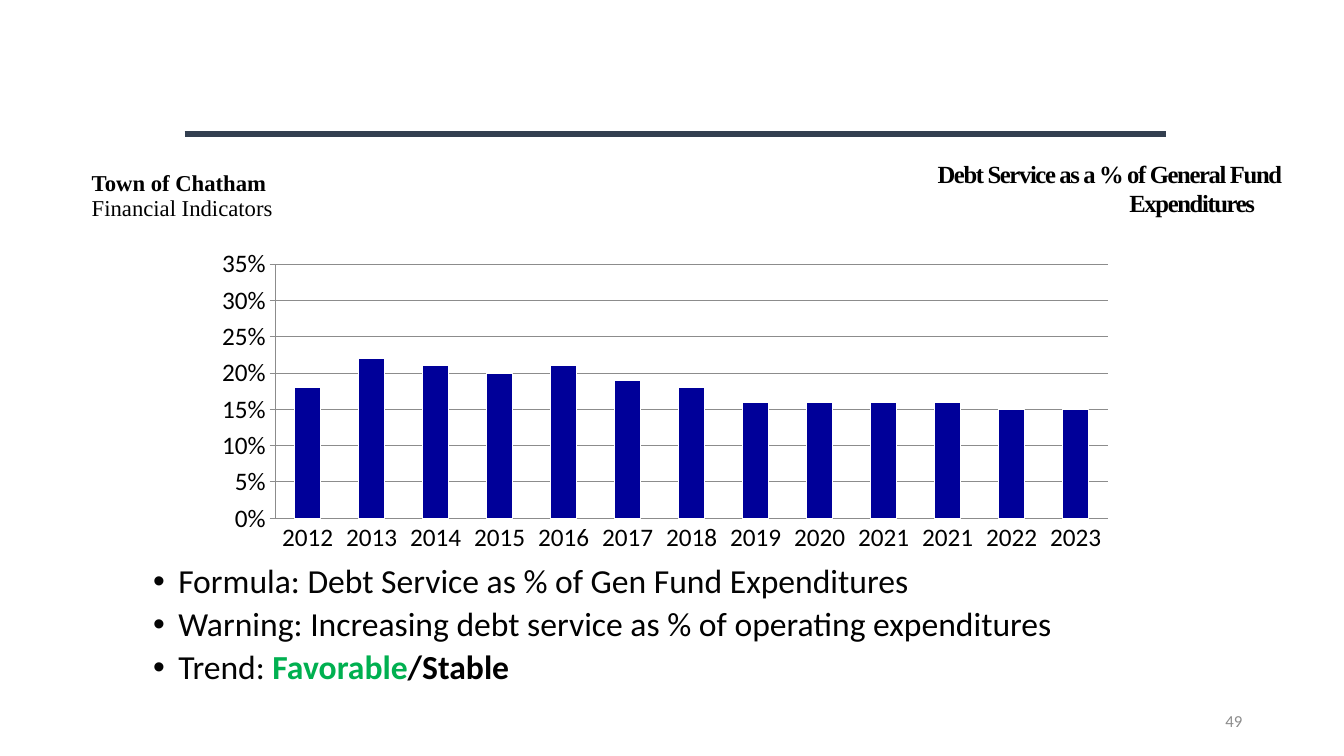
import pptx
import pptx.util
import pptx.chart.data
import pptx.dml.color
import pptx.enum.chart
import pptx.enum.shapes
import pptx.enum.text
import pptx.oxml
import pptx.oxml.ns

Inches = pptx.util.Inches
Pt = pptx.util.Pt
Align = pptx.enum.text.PP_ALIGN
Anchor = pptx.enum.text.MSO_ANCHOR
Tick = pptx.enum.chart.XL_TICK_MARK

THEME = {
    "black": "000000", "ink": "040404", "green": "00B050", "gray": "8C8C8C",
    "navy": "333F50", "bar": "000099", "white": "FFFFFF",
    "serif": "Times New Roman", "sans": "Calibri",
    "title": 16.2, "head": 17.6, "body": 24, "axis": 18, "page": 12,
}

TITLE = [("Town of Chatham", True), ("Financial Indicators", False)]
HEAD = "Debt Service as a % of General Fund Expenditures\t"
POINTS = [
    [("Formula: Debt Service as % of Gen Fund Expenditures", "ink", False)],
    [("Warning:", "ink", False),
     (" Increasing debt service as % of operating expenditures", "black", False)],
    [("Trend: ", "ink", False), ("Favorable", "green", True),
     ("/Stable", "black", True)],
]
PAGE = "49"
RATES = [
    ("2012", 0.18), ("2013", 0.22), ("2014", 0.21), ("2015", 0.2),
    ("2016", 0.21), ("2017", 0.19), ("2018", 0.18), ("2019", 0.16),
    ("2020", 0.16), ("2021", 0.16), ("2021", 0.16), ("2022", 0.15),
    ("2023", 0.15),
]
BOXES = {
    "title": (0.81, 1.66, 2.2, 0.58),
    "head": (7.94, 1.49, 4.86, 0.75),
    "chart": (2, 2.4, 9.17, 3.15),
    "body": (0.92, 5.55, 11.8, 1.45),
    "page": (9.42, 6.95, 3, 0.4),
}
PLOT = {"x": 0.08, "y": 0.07, "w": 0.9, "h": 0.8}


def apply(item, values):
    for name, value in values.items():
        setattr(item, name, value)


def color(name):
    return pptx.dml.color.RGBColor.from_string(THEME[name])


def style(font, size, face, tone, bold=False):
    apply(font, {"size": Pt(THEME[size]), "name": THEME[face], "bold": bold})
    font.color.rgb = color(tone)


def stroke(line, tone, width):
    line.color.rgb = color(tone)
    line.width = Pt(width)


def place(name):
    return [Inches(n) for n in BOXES[name]]


def write(par, text, *look):
    run = par.add_run()
    run.text = text
    style(run.font, *look)
    return run


def add_box(slide, name, anchor):
    frame = slide.shapes.add_textbox(*place(name)).text_frame
    apply(frame, {"word_wrap": True, "vertical_anchor": anchor})
    return frame


def add_title(slide):
    shape = slide.shapes.title
    apply(shape, dict(zip(("left", "top", "width", "height"), place("title"))))
    frame = shape.text_frame
    apply(frame, {"word_wrap": True, "vertical_anchor": Anchor.MIDDLE,
                  "auto_size": pptx.enum.text.MSO_AUTO_SIZE.NONE})
    par = frame.paragraphs[0]
    apply(par, {"alignment": Align.LEFT, "line_spacing": 0.9})
    for i, (text, bold) in enumerate(TITLE):
        if i:
            par.add_line_break()
        write(par, text, "title", "serif", "black", bold)


def add_rule(slide):
    rule = slide.shapes.add_connector(
        pptx.enum.shapes.MSO_CONNECTOR.STRAIGHT,
        Inches(1.83), Inches(1.33), Inches(11.56), Inches(1.33))
    stroke(rule.line, "navy", 4.25)
    rule._element.spPr.append(pptx.oxml.parse_xml(
        f'<a:effectLst {pptx.oxml.ns.nsdecls("a")}/>'))


def add_labels(slide):
    par = add_box(slide, "head", Anchor.MIDDLE).paragraphs[0]
    par.alignment = Align.RIGHT
    run = write(par, HEAD, "head", "serif", "black", True)
    run._r.get_or_add_rPr().set("spc", "-100")
    par = add_box(slide, "page", Anchor.MIDDLE).paragraphs[0]
    par.alignment = Align.RIGHT
    write(par, PAGE, "page", "sans", "gray")


def add_points(slide):
    frame = add_box(slide, "body", Anchor.TOP)
    for i, parts in enumerate(POINTS):
        par = frame.add_paragraph() if i else frame.paragraphs[0]
        apply(par, {"line_spacing": 0.9, "space_before": Pt(5 if i else 0)})
        props = par._p.get_or_add_pPr()
        props.set("marL", str(Inches(0.75)))
        props.set("indent", str(Inches(-0.25)))
        for tag, key, value in (("buFont", "typeface", "Arial"),
                                ("buChar", "char", "•")):
            props.append(pptx.oxml.parse_xml(
                f'<a:{tag} {pptx.oxml.ns.nsdecls("a")} {key}="{value}"/>'))
        for text, tone, bold in parts:
            write(par, text, "body", "sans", tone, bold)


def add_chart(slide):
    data = pptx.chart.data.CategoryChartData(number_format="0%")
    data.categories = [year for year, rate in RATES]
    data.add_series("Series 1", [rate for year, rate in RATES])
    chart = slide.shapes.add_chart(
        pptx.enum.chart.XL_CHART_TYPE.COLUMN_CLUSTERED,
        *place("chart"), data).chart
    apply(chart, {"has_legend": False, "has_title": False})
    style(chart.font, "axis", "sans", "black")
    plot = chart.plots[0]
    apply(plot, {"gap_width": 150, "vary_by_categories": False})
    bars = plot.series[0].format
    bars.fill.solid()
    bars.fill.fore_color.rgb = color("bar")
    stroke(bars.line, "white", 0.5)
    for axis, tick in ((chart.category_axis, Tick.NONE),
                       (chart.value_axis, Tick.OUTSIDE)):
        apply(axis, {"major_tick_mark": tick, "minor_tick_mark": Tick.NONE})
        style(axis.tick_labels.font, "axis", "sans", "black")
        stroke(axis.format.line, "gray", 0.5)
    axis = chart.value_axis
    apply(axis, {"minimum_scale": 0, "maximum_scale": 0.35,
                 "major_unit": 0.05, "has_major_gridlines": True})
    apply(axis.tick_labels, {"number_format": "0%",
                             "number_format_is_linked": False})
    stroke(axis.major_gridlines.format.line, "gray", 0.5)
    area = chart._chartSpace.chart.plotArea
    for old in area.findall(pptx.oxml.ns.qn("c:layout")):
        area.remove(old)
    sizes = "".join(f'<c:{k} val="{v}"/>' for k, v in PLOT.items())
    area.insert(0, pptx.oxml.parse_xml(
        f'<c:layout {pptx.oxml.ns.nsdecls("c")}><c:manualLayout>'
        '<c:layoutTarget val="inner"/><c:xMode val="edge"/>'
        f'<c:yMode val="edge"/>{sizes}</c:manualLayout></c:layout>'))


def main():
    deck = pptx.Presentation()
    apply(deck, {"slide_width": Inches(13.33), "slide_height": Inches(7.5)})
    slide = deck.slides.add_slide(deck.slide_layouts[5])
    for draw in (add_title, add_points, add_labels, add_rule, add_chart):
        draw(slide)
    deck.save("out.pptx")


if __name__ == "__main__":
    main()
